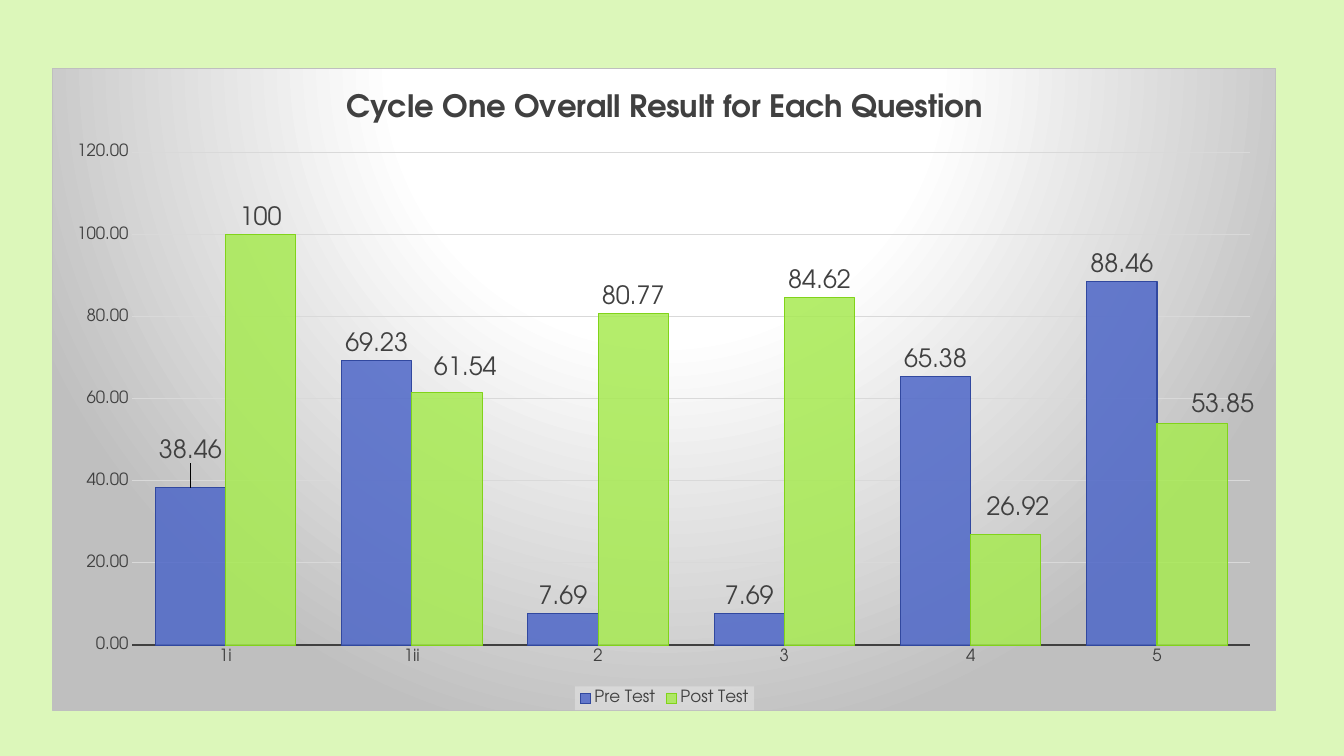
from lxml import etree
from pptx import Presentation
from pptx.chart.data import CategoryChartData
from pptx.dml.color import RGBColor
from pptx.enum.chart import XL_CHART_TYPE as ChartType, XL_LABEL_POSITION as LabelPos
from pptx.enum.chart import XL_LEGEND_POSITION as LegendPos, XL_TICK_MARK as Tick
from pptx.oxml import parse_xml
from pptx.oxml.ns import nsdecls, qn
from pptx.util import Inches, Pt

FONT = "TeX Gyre Adventor"
TITLE = "Cycle One Overall Result for Each Question"
QUESTIONS = ["1i", "1ii", "2", "3", "4", "5"]
SERIES = [
    {"name": "Pre Test", "values": [38.46, 69.23, 7.69, 7.69, 65.38, 88.46],
     "fill": "4E67C8", "line": "31489F", "format": "0.00",
     "moved": {0: (0, -0.03)}},
    {"name": "Post Test", "values": [100, 61.54, 80.77, 84.62, 26.92, 53.85],
     "fill": "A7EA52", "line": "81D31A", "format": "General",
     "moved": {1: (0.015, -0.012), 4: (0.01, -0.015), 5: (0.025, -0.003)}},
]
GRADIENT = [(0, "FFFFFF"), (39, "FFFFFF"), (100, "BFBFBF")]
PLOT = {"x": 0.065, "y": 0.131, "w": 0.914, "h": 0.768}
TEXT, GRID, BORDER, BACK = "404040", "D9D9D9", "BFBFBF", "DCF7BA"


def rgb(value):
    return RGBColor.from_string(value)


def set_font(font, size, bold=False):
    font.name, font.size, font.bold = FONT, Pt(size), bold
    font.color.rgb = rgb(TEXT)


def set_line(line, color, width):
    line.color.rgb = rgb(color)
    line.width = Pt(width)


def set_fill(fill, color, alpha):
    fill.solid()
    fill.fore_color.rgb = rgb(color)
    clr = fill._xPr.find(".//" + qn("a:srgbClr"))
    etree.SubElement(clr, qn("a:alpha")).set("val", str(alpha * 1000))


def layout(sizes, inner=False):
    target = '<c:layoutTarget val="inner"/>' if inner else ""
    modes = '<c:xMode val="edge"/><c:yMode val="edge"/>' if inner else ""
    values = "".join(f'<c:{key} val="{value}"/>' for key, value in sizes.items())
    return parse_xml(f'<c:layout {nsdecls("c")}><c:manualLayout>{target}{modes}{values}'
                     '</c:manualLayout></c:layout>')


def shape_props(content):
    return parse_xml(f'<c:spPr {nsdecls("c", "a")}>{content}</c:spPr>')


def style_frame(chart):
    stops = "".join(f'<a:gs pos="{pos * 1000}"><a:srgbClr val="{color}"/></a:gs>'
                    for pos, color in GRADIENT)
    chart._chartSpace.find(qn("c:chart")).addnext(shape_props(
        f'<a:gradFill><a:gsLst>{stops}</a:gsLst><a:path path="circle">'
        '<a:fillToRect l="50000" t="-80000" r="50000" b="180000"/></a:path></a:gradFill>'
        f'<a:ln w="{Pt(0.75)}"><a:solidFill><a:srgbClr val="{BORDER}"/></a:solidFill></a:ln>'))
    area = chart._chartSpace.find(".//" + qn("c:plotArea"))
    for old in area.findall(qn("c:layout")):
        area.remove(old)
    area.insert(0, layout(PLOT, inner=True))


def style_axes(chart):
    for axis in (chart.category_axis, chart.value_axis):
        axis.major_tick_mark = axis.minor_tick_mark = Tick.NONE
        set_font(axis.tick_labels.font, 12)
    set_line(chart.category_axis.format.line, TEXT, 1.5)
    axis = chart.value_axis
    axis.minimum_scale, axis.maximum_scale, axis.major_unit = 0, 120, 20
    axis.format.line.fill.background()
    axis.tick_labels.number_format = "0.00"
    axis.tick_labels.number_format_is_linked = False
    set_line(axis.major_gridlines.format.line, GRID, 0.75)


def style_legend(chart):
    chart.has_legend = True
    legend = chart.legend
    legend.position, legend.include_in_layout = LegendPos.BOTTOM, False
    set_font(legend.font, 12)
    legend._element.find(qn("c:txPr")).addprevious(shape_props(
        '<a:solidFill><a:srgbClr val="F2F2F2"><a:alpha val="39000"/></a:srgbClr></a:solidFill>'))


def style_series(series, look):
    set_fill(series.format.fill, look["fill"], 85)
    set_line(series.format.line, look["line"], 0.75)
    labels = series.data_labels
    labels.show_value, labels.position = True, LabelPos.OUTSIDE_END
    labels.number_format, labels.number_format_is_linked = look["format"], False
    set_font(labels.font, 18)
    for index, (x, y) in look["moved"].items():
        label = series.points[index].data_label
        label.position = LabelPos.OUTSIDE_END
        set_font(label.font, 18)
        item = labels._element.find(f'{qn("c:dLbl")}[{list(look["moved"]).index(index) + 1}]')
        item.insert(1, layout({"x": x, "y": y}))


def main():
    """Build the slide with the question results chart."""
    prs = Presentation()
    prs.slide_width, prs.slide_height = Inches(13.33), Inches(7.5)
    s = prs.slides.add_slide(prs.slide_layouts[6])
    s.background.fill.solid()
    s.background.fill.fore_color.rgb = rgb(BACK)

    data = CategoryChartData()
    data.categories = QUESTIONS
    for look in SERIES:
        data.add_series(look["name"], look["values"])
    box = [Inches(n) for n in (0.52, 0.67, 12.14, 6.38)]
    chart = s.shapes.add_chart(ChartType.COLUMN_CLUSTERED, *box, data).chart
    set_font(chart.font, 10)
    chart.has_title = True
    chart.chart_title.text_frame.text = TITLE
    set_font(chart.chart_title.text_frame.paragraphs[0].runs[0].font, 22, bold=True)
    chart.chart_title.include_in_layout = False

    plot = chart.plots[0]
    plot.gap_width, plot.overlap, plot.vary_by_categories = 65, 0, False
    style_frame(chart)
    style_axes(chart)
    style_legend(chart)
    for series, look in zip(plot.series, SERIES):
        style_series(series, look)
    prs.save("out.pptx")


if __name__ == "__main__":
    main()
